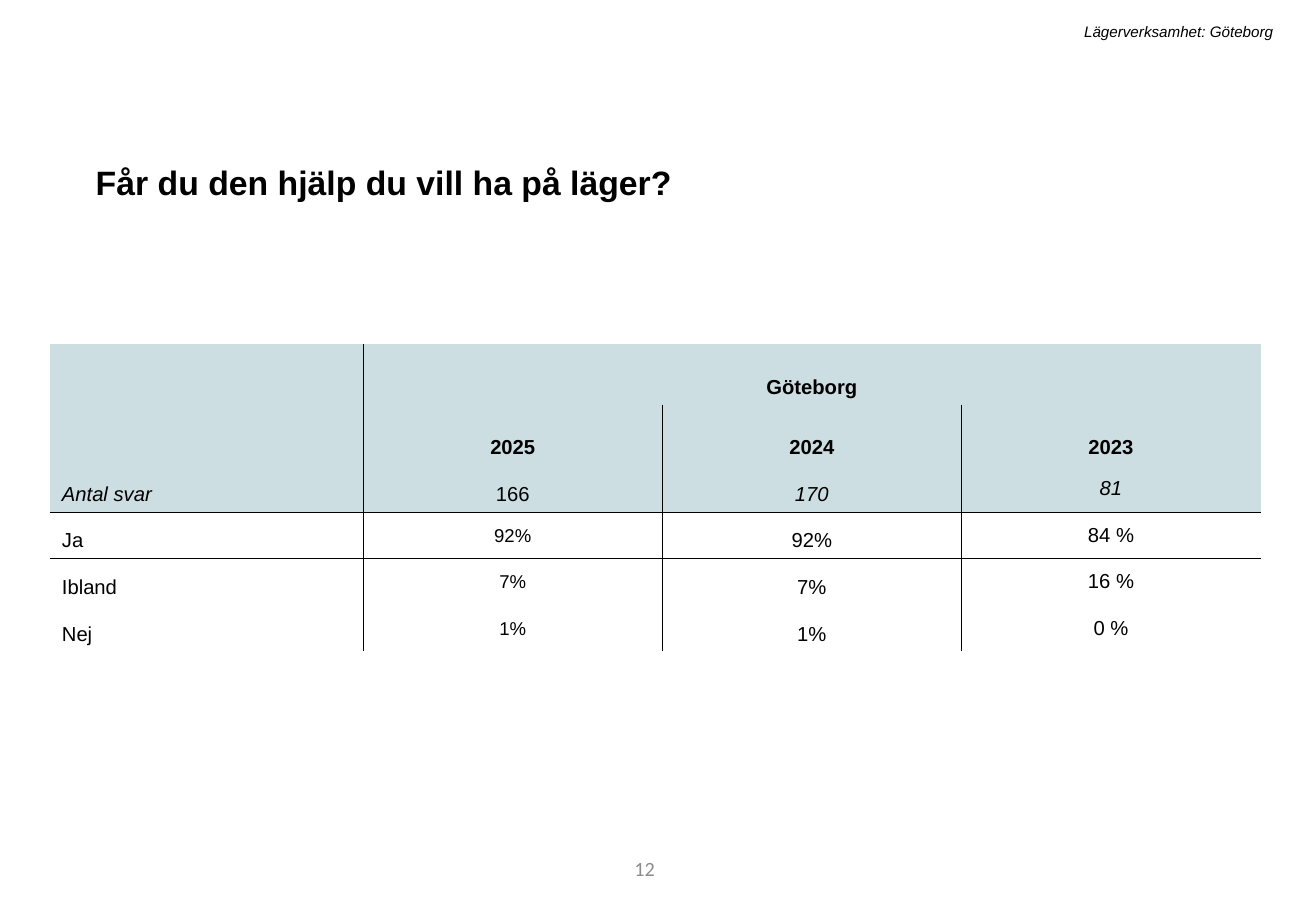
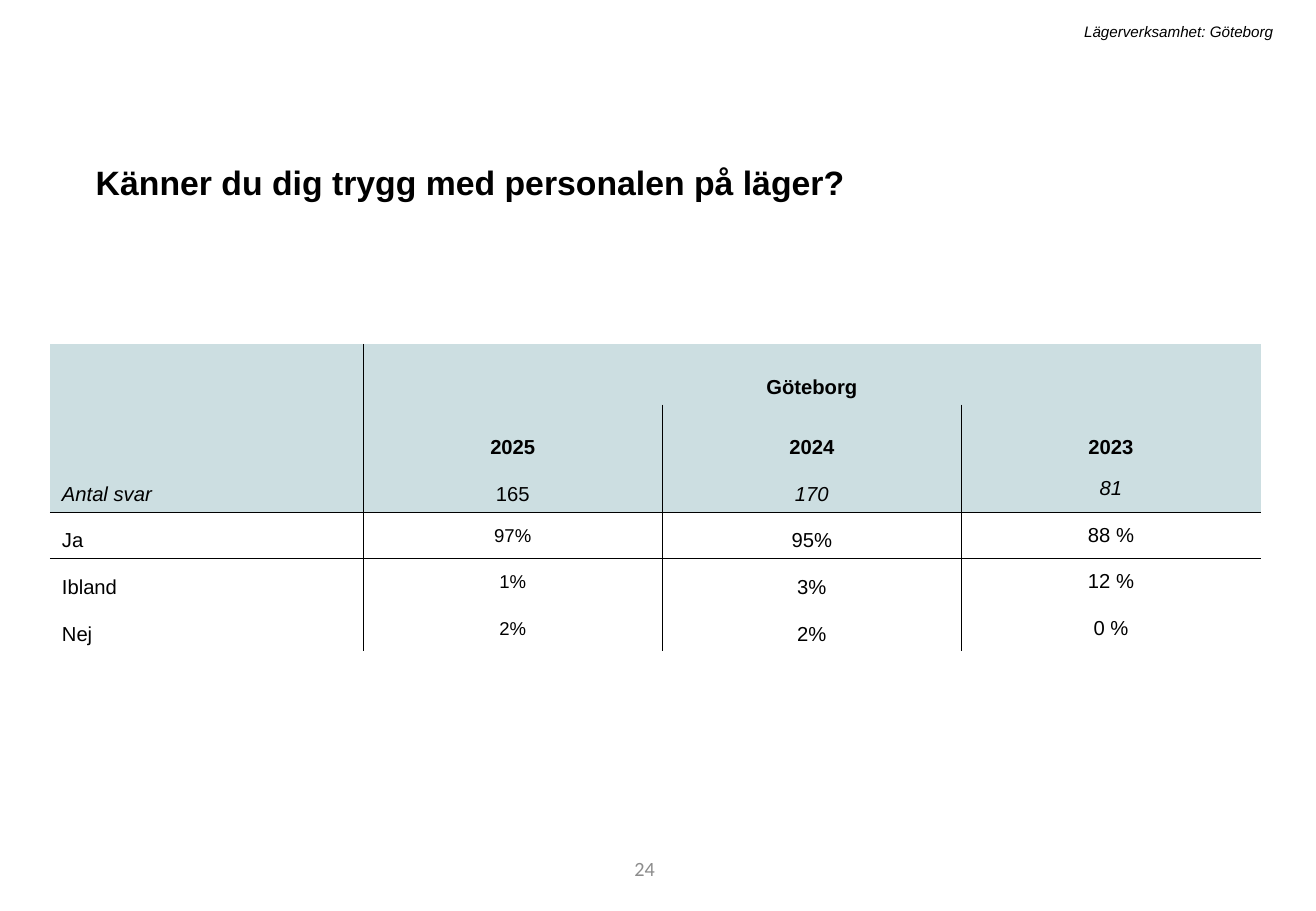
from lxml.etree import SubElement
from pptx import Presentation
from pptx.dml.color import RGBColor
from pptx.enum.text import MSO_ANCHOR, PP_ALIGN
from pptx.oxml import parse_xml
from pptx.oxml.ns import nsdecls
from pptx.util import Pt

BLACK = RGBColor(0x00, 0x00, 0x00)
GREY = RGBColor(0x8C, 0x8C, 0x8C)
HEADER_BLUE = RGBColor(0xCC, 0xDE, 0xE1)
NO_STYLE_NO_GRID = "{2D5ABB26-0587-4C30-8999-92F81FD0307C}"

COLUMN_WIDTHS = [185.8] + [177.3] * 3
ROW_HEIGHTS = [36] * 2 + [27.6] * 4
ANSWER_COUNT_ROW = 2
FIXED_LINE = Pt(20.3)

QUESTIONS = [
    ("Får du den hjälp du vill ha på läger?", "12", [
        ("Antal svar", "166", "170", "81"),
        ("Ja", "92%", "92%", "84 %"),
        ("Ibland", "7%", "7%", "16 %"),
        ("Nej", "1%", "1%", "0 %"),
    ]),
    ("Känner du dig trygg med personalen på läger?", "24", [
        ("Antal svar", "165", "170", "81"),
        ("Ja", "97%", "95%", "88 %"),
        ("Ibland", "1%", "3%", "12 %"),
        ("Nej", "2%", "2%", "0 %"),
    ]),
]


def write(frame, text, size=12, font="Arial", color=BLACK, bold=False, italic=False,
          align=PP_ALIGN.LEFT, line_spacing=None):
    frame.word_wrap = True
    paragraph = frame.paragraphs[0]
    paragraph.alignment = align
    paragraph.line_spacing = line_spacing
    run = paragraph.add_run()
    run.text = text
    run.font.size = Pt(size)
    run.font.name = font
    run.font.color.rgb = color
    run.font.bold = bold
    run.font.italic = italic


def add_borders(cell, sides):
    """Draw hairlines on the given sides, listed in the order L, R, T, B."""
    properties = cell._tc.get_or_add_tcPr()
    for side in sides:
        line = parse_xml(f'<a:ln{side} {nsdecls("a")} w="3175"/>')
        fill = SubElement(line, line.tag.replace(f"ln{side}", "solidFill"))
        SubElement(fill, line.tag.replace(f"ln{side}", "srgbClr"), val=str(BLACK))
        properties.append(line)


prs = Presentation()
prs.slide_width, prs.slide_height = Pt(780), Pt(540)

for question, page, answers in QUESTIONS:
    slide = prs.slides.add_slide(prs.slide_layouts[6])

    page_number = slide.shapes.add_textbox(Pt(219.6), Pt(500.4), Pt(175.7), Pt(28.8)).text_frame
    page_number.vertical_anchor = MSO_ANCHOR.MIDDLE
    write(page_number, page, font="Calibri", color=GREY, align=PP_ALIGN.RIGHT)

    title = slide.shapes.add_textbox(Pt(49.7), Pt(92.2), Pt(676.8), Pt(31.7)).text_frame
    write(title, question, size=20, bold=True)

    rows = [("", "Göteborg", "", ""), ("", "2025", "2024", "2023")] + answers
    table = slide.shapes.add_table(
        len(rows), len(COLUMN_WIDTHS), Pt(29.5), Pt(203.8),
        Pt(sum(COLUMN_WIDTHS)), Pt(sum(ROW_HEIGHTS))).table
    table.first_row = table.horz_banding = False
    table._tbl.tblPr[0].text = NO_STYLE_NO_GRID
    for column, width in zip(table.columns, COLUMN_WIDTHS):
        column.width = Pt(width)
    for row, height in zip(table.rows, ROW_HEIGHTS):
        row.height = Pt(height)
    table.cell(0, 1).merge(table.cell(0, 3))

    for r, texts in enumerate(rows):
        is_heading = r < ANSWER_COUNT_ROW
        is_count = r == ANSWER_COUNT_ROW
        is_answer = r > ANSWER_COUNT_ROW
        for c, text in enumerate(texts):
            cell = table.cell(r, c)
            sides = ""
            if c == 1 or (c > 1 and r > 0):
                sides += "L"
            if c == 0 or (c < 3 and r > 0):
                sides += "R"
            if r == ANSWER_COUNT_ROW + 1:
                sides += "T"
            if is_count:
                sides += "B"
            add_borders(cell, sides)
            if is_answer:
                cell.fill.background()
            else:
                cell.fill.solid()
                cell.fill.fore_color.rgb = HEADER_BLUE
            cell.vertical_anchor = MSO_ANCHOR.BOTTOM if is_heading else MSO_ANCHOR.MIDDLE

            tight = is_answer and c == 1
            if tight:
                cell.margin_left = cell.margin_right = cell.margin_top = Pt(0.75)
                cell.margin_bottom = Pt(0)
            if text:
                write(cell.text_frame, text, size=11 if tight else 12,
                      bold=is_heading, italic=is_count and c != 1,
                      align=PP_ALIGN.CENTER if c else PP_ALIGN.LEFT,
                      line_spacing=None if r == 0 or c == 3 or tight else FIXED_LINE)

    section = slide.shapes.add_textbox(Pt(123.8), Pt(9.4), Pt(637.9), Pt(18)).text_frame
    write(section, "Lägerverksamhet: Göteborg", size=9, italic=True, align=PP_ALIGN.RIGHT)

prs.save("out.pptx")
